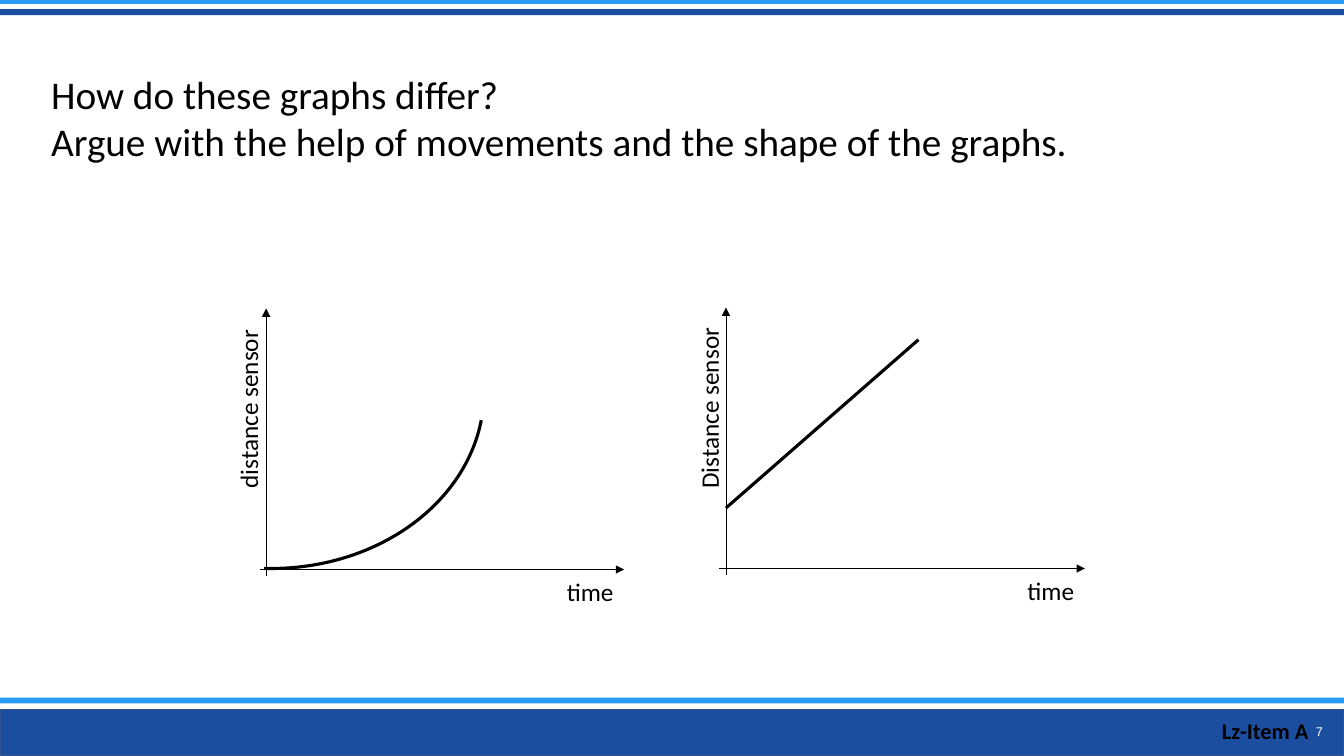
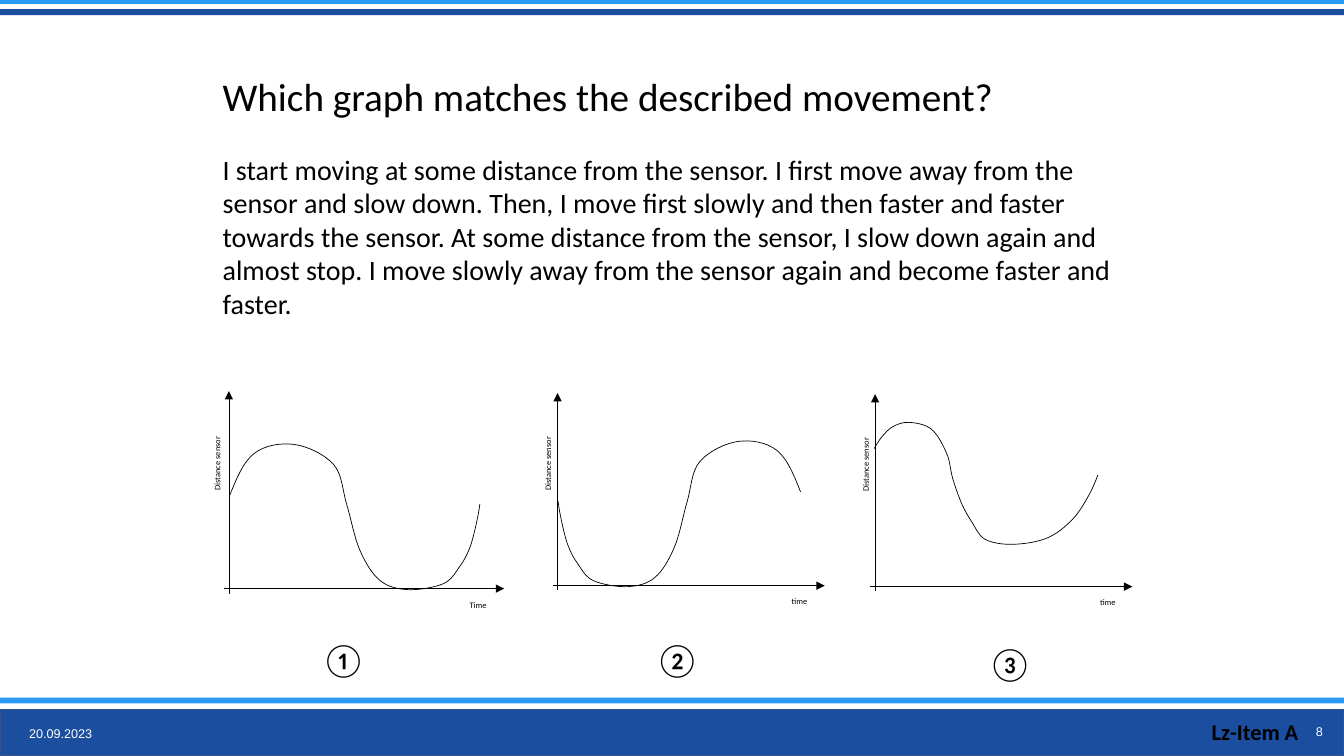
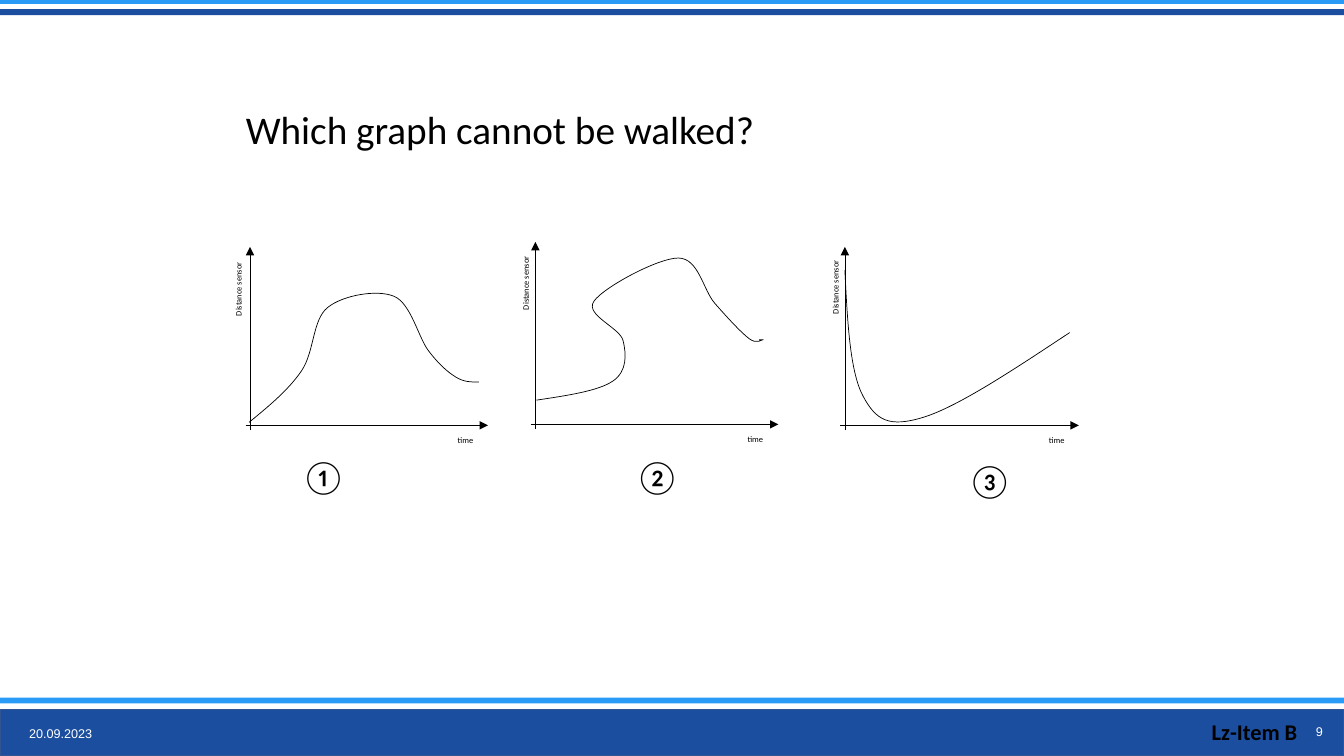
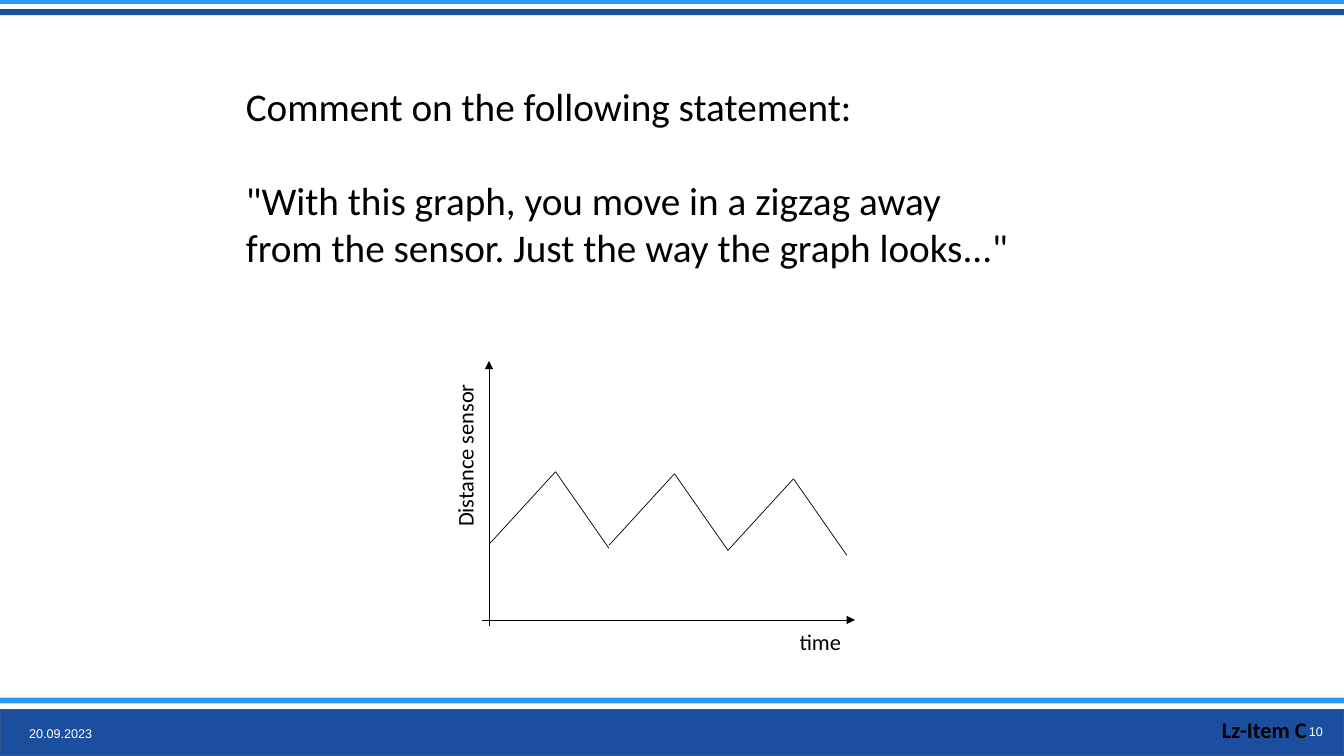
from dataclasses import dataclass

from lxml import etree
from pptx import Presentation
from pptx.dml.color import RGBColor
from pptx.enum.shapes import MSO_CONNECTOR, MSO_SHAPE
from pptx.enum.text import MSO_ANCHOR, PP_ALIGN
from pptx.oxml.ns import qn
from pptx.util import Inches, Pt

STRAIGHT = MSO_CONNECTOR.STRAIGHT
RECTANGLE, ARC = MSO_SHAPE.RECTANGLE, MSO_SHAPE.ARC
MIDDLE = MSO_ANCHOR.MIDDLE
LEFT, CENTER, RIGHT = PP_ALIGN.LEFT, PP_ALIGN.CENTER, PP_ALIGN.RIGHT


@dataclass(frozen=True)
class Theme:
    """Colours, fonts and type sizes shared by all slides."""
    navy: RGBColor = RGBColor(0x1B, 0x4E, 0x9F)
    navy_edge: RGBColor = RGBColor(0x32, 0x54, 0x91)
    sky: RGBColor = RGBColor(0x29, 0x9A, 0xF5)
    black: RGBColor = RGBColor(0, 0, 0)
    white: RGBColor = RGBColor(0xFF, 0xFF, 0xFF)
    text_font: str = "Calibri"
    footer_font: str = "Arial"
    title: int = 28
    body: int = 20
    number: int = 24
    tag: int = 16
    footer: int = 9
    axis_large: int = 18
    axis_medium: int = 16
    axis_small: int = 6
    hairline: float = 0.25
    thin: float = 0.5
    bold_line: float = 2.25


THEME = Theme()
SLIDE_WIDTH, SLIDE_HEIGHT = 13.33, 7.5
DATE = "20.09.2023"
NUMBERS = [("①", 0, 0), ("②", 3.31, 0), ("③", 6.61, 0.04)]

WAVE = [(0.01, 0.93), (0.25, 1.34), (0.65, 1.43), (1.04, 1.23), (1.17, 0.83),
        (1.3, 0.38), (1.5, 0.08), (1.78, -0.01), (2.13, 0.05), (2.29, 0.22),
        (2.38, 0.38), (2.43, 0.54), (2.47, 0.72), (2.49, 0.84)]
MIRRORED_WAVE = [(2.42 - 0.97 * x, y) for x, y in WAVE]
RAISED_WAVE = [(-0.01, 1.37), (0.07, 1.49), (0.18, 1.59), (0.34, 1.63),
               (0.56, 1.56), (0.71, 1.32), (0.77, 1.07), (0.86, 0.82),
               (0.96, 0.64), (1.09, 0.47), (1.36, 0.42), (1.7, 0.48),
               (1.95, 0.66), (2.11, 0.89), (2.21, 1.11)]
HILL = [(-0.01, 0.03), (0.51, 0.54), (0.77, 1.17), (1.43, 1.28),
        (1.77, 0.74), (2.04, 0.48), (2.27, 0.43)]
BACKWARD_LOOP = [(0.01, 0.24), (0.77, 0.43), (0.87, 0.83), (0.58, 1.22),
                 (1.42, 1.65), (1.78, 1.2), (2.12, 0.85), (2.26, 0.84),
                 (2.22, 0.84)]
DIP = [(0, 1.54), (0.18, 0.29), (0.78, 0.08), (2.23, 0.92)]


@dataclass(frozen=True)
class Graph:
    """Origin, extent and label placing of one distance-time graph, in inches."""
    left: float
    base: float
    width: float
    height: float
    label_gap: float
    label_rise: float
    label_length: float = 1.89
    size: int = THEME.axis_small
    axis_line: float = THEME.hairline
    distance: str = "Distance sensor"
    time: str = "time"

    def at(self, point):
        """Turn an offset right of and above the origin into a slide position."""
        return self.left + point[0], self.base - point[1]


def add_text(page, box, texts, size, font=THEME.text_font, color=THEME.black,
             align=LEFT, bold=False):
    """Place a vertically centred text box with one paragraph per text."""
    shape = page.shapes.add_textbox(*map(Inches, box))
    frame = shape.text_frame
    frame.word_wrap = True
    frame.vertical_anchor = MIDDLE
    for index, text in enumerate(texts):
        para = frame.paragraphs[0] if index == 0 else frame.add_paragraph()
        para.text = text
        para.alignment = align
        para.font.name, para.font.size = font, Pt(size)
        para.font.bold = bold
        para.font.color.rgb = color
    return shape


def add_band(page, box, fill, edge=None):
    """Draw one horizontal band."""
    band = page.shapes.add_shape(RECTANGLE, *map(Inches, box))
    band.shadow.inherit = False
    band.fill.solid()
    band.fill.fore_color.rgb = fill
    if edge is None:
        band.line.fill.background()
    else:
        band.line.color.rgb = edge
        band.line.width = Pt(1)


def add_line(page, start, end, weight, arrow=False):
    """Draw a straight black line, with an arrowhead at its end if asked."""
    line = page.shapes.add_connector(STRAIGHT, *map(Inches, (*start, *end)))
    line.line.color.rgb = THEME.black
    line.line.width = Pt(weight)
    properties = line._element.spPr
    if arrow:
        outline = properties.find(qn("a:ln"))
        etree.SubElement(outline, qn("a:tailEnd"), type="triangle")
    etree.SubElement(properties, qn("a:effectLst"))


def add_label(page, center, width, height, text, size, rotation=0):
    """Place an axis label without insets around its centre."""
    box = (center[0] - width / 2, center[1] - height / 2, width, height)
    label = add_text(page, box, [text], size, align=CENTER)
    label.rotation = rotation
    frame = label.text_frame
    frame.margin_left = frame.margin_right = 0
    frame.margin_top = frame.margin_bottom = 0
    frame.paragraphs[0].line_spacing = 1.07


def add_axes(page, graph):
    """Draw the two axes of a graph and their labels."""
    overhang = 0.025 * graph.height
    add_line(page, graph.at((0, -overhang)), graph.at((0, graph.height)),
             graph.axis_line, arrow=True)
    add_label(page, graph.at((-graph.label_gap, graph.label_rise)),
              graph.label_length, 0.26 * graph.label_length,
              graph.distance, graph.size, rotation=270)
    add_line(page, graph.at((-overhang, 0)), graph.at((graph.width, 0)),
             graph.axis_line, arrow=True)
    width, height = 0.16 * graph.width, 0.11 * graph.height
    time_center = graph.at((0.985 * graph.width - width / 2, -overhang - height / 2))
    add_label(page, time_center, width, height, graph.time, graph.size)


def middle(a, b):
    """Return the point halfway between two points."""
    return (a[0] + b[0]) / 2, (a[1] + b[1]) / 2


def curve_segments(knots):
    """Return two control points and an end for each stretch between knots."""
    leaving, arriving = [], []
    for before, (x, y), after in zip(knots, knots[1:], knots[2:]):
        dx, dy = (after[0] - before[0]) / 6, (after[1] - before[1]) / 6
        leaving.append((x + dx, y + dy))
        arriving.append((x - dx, y - dy))
    leaving.insert(0, middle(knots[0], arriving[0]))
    arriving.append(middle(leaving[-1], knots[-1]))
    return zip(leaving, arriving, knots[1:])


def style_outline(shape, weight):
    """Leave a shape unfilled with a black outline."""
    shape.shadow.inherit = False
    shape.fill.background()
    shape.line.color.rgb = THEME.black
    shape.line.width = Pt(weight)


def add_curve(page, graph, offsets):
    """Draw a smooth curve through knots given from the graph's origin."""
    knots = [tuple(map(Inches, graph.at(offset))) for offset in offsets]
    builder = page.shapes.build_freeform(*knots[0])
    builder.add_line_segments(knots[1:], close=False)
    curve = builder.convert_to_shape()
    lines = list(curve._element.iter(qn("a:lnTo")))
    for line, segment in zip(lines, curve_segments(knots)):
        bend = etree.Element(qn("a:cubicBezTo"))
        for x, y in segment:
            etree.SubElement(bend, qn("a:pt"), x=str(round(x - curve.left)),
                             y=str(round(y - curve.top)))
        line.getparent().replace(line, bend)
    style_outline(curve, THEME.thin)


def add_quarter_arc(page, graph):
    """Draw the bold rising arc of an accelerating movement."""
    width, height = 3.5, 4.22
    x, y = graph.at((0.05, 1.76))
    box = (x - width / 2, y - height / 2, width, height)
    arc = page.shapes.add_shape(ARC, *map(Inches, box))
    arc.adjustments[0], arc.adjustments[1] = 166.58, 1.4
    arc.rotation = 90
    style_outline(arc, THEME.bold_line)


def add_zigzag(page, graph):
    """Draw three teeth, each a rising and a falling line."""
    for x, y in [(0.01, 0.76), (1.19, 0.74), (2.37, 0.69)]:
        peak = graph.at((x + 0.65, y + 0.71))
        add_line(page, graph.at((x, y)), peak, THEME.thin)
        add_line(page, peak, graph.at((x + 1.18, y - 0.05)), THEME.thin)


def add_numbers(page, left, top):
    """Place the circled numbers of the three graphs."""
    for number, shift, drop in NUMBERS:
        add_text(page, (left + shift, top + drop, 0.86, 0.5), [number], THEME.number)


def add_choices(page, choices):
    """Draw each graph with its curve."""
    for graph, knots in choices:
        add_axes(page, graph)
        add_curve(page, graph, knots)


def add_page(deck, number, tag, tag_left, tag_top, date=None):
    """Add a blank slide with bands and footer."""
    page = deck.slides.add_slide(deck.slide_layouts[6])
    add_band(page, (0, 7.04, SLIDE_WIDTH, 0.46), THEME.navy, THEME.navy_edge)
    add_band(page, (0, 0, SLIDE_WIDTH, 0.04), THEME.sky)
    add_band(page, (0, 0.09, SLIDE_WIDTH, 0.06), THEME.navy)
    add_band(page, (0, 6.92, SLIDE_WIDTH, 0.06), THEME.sky)
    footer = {"font": THEME.footer_font, "color": THEME.white}
    if date:
        add_text(page, (0.19, 7.08, 1.03, 0.4), [date], THEME.footer, **footer)
    add_text(page, (12.68, 7.06, 0.54, 0.4), [str(number)], THEME.footer,
             align=RIGHT, **footer)
    add_text(page, (tag_left, tag_top, 1.3, 0.37), [tag], THEME.tag, bold=True)
    return page


def build_comparison(deck):
    """Build the slide comparing an accelerating and a steady movement."""
    page = add_page(deck, 7, "Lz-Item A", 12.02, 7.06)
    add_text(page, (0.41, 0.64, 12.51, 1.04),
             ["How do these graphs differ?",
              "Argue with the help of movements and the shape of the graphs."],
             THEME.title)
    style = {"label_length": 2.49, "size": THEME.axis_large}
    accelerating = Graph(2.64, 5.65, 3.55, 2.59, 0.19, 1.59,
                         distance="distance sensor", **style)
    steady = Graph(7.2, 5.64, 3.56, 2.59, 0.18, 1.59, **style)
    for graph in (accelerating, steady):
        add_axes(page, graph)
    add_quarter_arc(page, accelerating)
    add_line(page, steady.at((0, 0.6)), steady.at((1.91, 2.27)), THEME.bold_line)


def build_matching(deck):
    """Build the slide matching a description with one of three graphs."""
    page = add_page(deck, 8, "Lz-Item A", 11.92, 7.07, DATE)
    question = add_text(
        page, (2.11, 0.65, 9.26, 2.59),
        ["Which graph matches the described movement?",
         "I start moving at some distance from the sensor. I first move away from "
         "the sensor and slow down. Then, I move first slowly and then faster and "
         "faster towards the sensor. At some distance from the sensor, I slow down "
         "again and almost stop. I move slowly away from the sensor again and "
         "become faster and faster."],
        THEME.title)
    description = question.text_frame.paragraphs[1]
    description.font.size = Pt(THEME.body)
    description.space_before = Pt(23.5)
    add_numbers(page, 3.09, 6.29)
    add_choices(page, [
        (Graph(2.27, 5.84, 2.73, 1.96, 0.12, 1.24, time="Time"), WAVE),
        (Graph(5.53, 5.81, 2.65, 1.91, 0.1, 1.21, 1.84), MIRRORED_WAVE),
        (Graph(8.68, 5.82, 2.55, 1.91, 0.1, 1.21, 1.84), RAISED_WAVE)])


def build_impossible(deck):
    """Build the slide asking for the graph that cannot be walked."""
    page = add_page(deck, 9, "Lz-Item B", 11.92, 7.07, DATE)
    add_text(page, (2.34, 0.99, 7.81, 0.57), ["Which graph cannot be walked?"],
             THEME.title)
    add_choices(page, [
        (Graph(2.48, 4.22, 2.36, 1.77, 0.12, 1.35), HILL),
        (Graph(5.31, 4.21, 2.41, 1.81, 0.1, 1.4), BACKWARD_LOOP),
        (Graph(8.38, 4.22, 2.32, 1.77, 0.1, 1.37), DIP)])
    add_numbers(page, 2.89, 4.47)


def build_statement(deck):
    """Build the slide with a statement about a zigzag graph."""
    page = add_page(deck, 10, "Lz-Item C", 12.02, 7.05, DATE)
    statement = add_text(
        page, (2.34, 0.52, 7.81, 2.46),
        ["Comment on the following statement:",
         '"With this graph, you move in a zigzag away from the sensor. '
         'Just the way the graph looks..."'],
        THEME.title)
    statement.text_frame.paragraphs[1].space_before = Pt(34)
    graph = Graph(4.85, 6.15, 3.63, 2.57, 0.25, 1.63, 2.67, THEME.axis_medium,
                  THEME.thin)
    add_axes(page, graph)
    add_zigzag(page, graph)


def main():
    """Build and save the deck."""
    deck = Presentation()
    deck.slide_width, deck.slide_height = Inches(SLIDE_WIDTH), Inches(SLIDE_HEIGHT)
    for build in (build_comparison, build_matching, build_impossible, build_statement):
        build(deck)
    deck.save("out.pptx")


if __name__ == "__main__":
    main()
